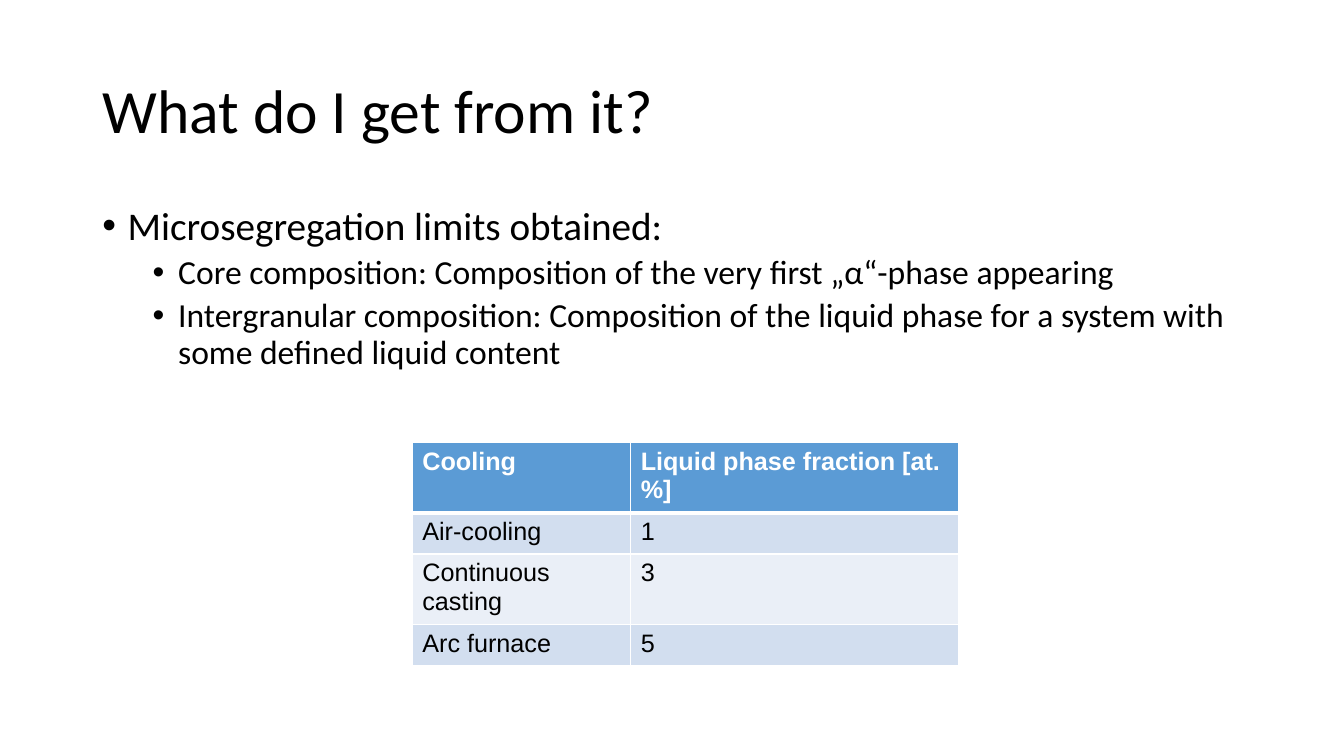
import pptx
import pptx.dml.color
import pptx.enum.text
import pptx.oxml
import pptx.oxml.ns
import pptx.util
from pptx.util import Cm

BLACK, WHITE, HEADER_BLUE = "000000", "FFFFFF", "5B9BD5"
ROW_BLUES = ("D2DEEF", "EAEFF7")

BULLETS = [
    (0, "Microsegregation limits obtained:"),
    (1, "Core composition: Composition of the very first „α“-phase appearing"),
    (1, "Intergranular composition: Composition of the liquid phase "
        "for a system with some defined liquid content"),
]
# Size, space before and left indent of each bullet level
LEVELS = [(28, 10, 0.64), (24, 5, 1.91)]
HANGING = 0.64

COOLING_ROWS = [
    ("Cooling", "Liquid phase fraction [at. %]"),
    ("Air-cooling", "1"),
    ("Continuous casting", "3"),
    ("Arc furnace", "5"),
]


def color(value):
    return pptx.dml.color.RGBColor.from_string(value)


def format_paragraph(paragraph, name, size, text_color, bold=False, **spacing):
    font = {"name": name, "size": pptx.util.Pt(size), "bold": bold}
    for target, values in ((paragraph.font, font), (paragraph, spacing)):
        for attribute, value in values.items():
            setattr(target, attribute, value)
    paragraph.font.color.rgb = color(text_color)


def add_xml(parent, tag, content="", **attributes):
    listed = " ".join(f'{key}="{value}"' for key, value in attributes.items())
    namespace = pptx.oxml.ns.nsdecls("a")
    parent.append(pptx.oxml.parse_xml(
        f"<a:{tag} {namespace} {listed}>{content}</a:{tag}>"))


def add_title(slide, text, left, top, width, height):
    title = slide.shapes.title
    title.left, title.top, title.width, title.height = left, top, width, height
    frame = title.text_frame
    frame.text = text
    frame.word_wrap = True
    frame.vertical_anchor = pptx.enum.text.MSO_ANCHOR.MIDDLE
    format_paragraph(frame.paragraphs[0], "Calibri", 44, BLACK, line_spacing=0.9,
                     alignment=pptx.enum.text.PP_ALIGN.LEFT)


def add_bullets(slide, left, top, width, height):
    frame = slide.shapes.add_textbox(left, top, width, height).text_frame
    frame.word_wrap = True
    for index, (level, text) in enumerate(BULLETS):
        paragraph = frame.add_paragraph() if index else frame.paragraphs[0]
        paragraph.text = text
        size, space_before, indent = LEVELS[level]
        properties = paragraph._p.get_or_add_pPr()
        properties.set("marL", str(Cm(indent)))
        properties.set("indent", str(-Cm(HANGING)))
        add_xml(properties, "buFont", typeface="Arial")
        add_xml(properties, "buChar", char="•")
        format_paragraph(paragraph, "Calibri", size, BLACK, level=level, line_spacing=0.9,
                         space_before=pptx.util.Pt(space_before if index else 0))


def add_borders(cell, bottom_width):
    properties = cell._tc.get_or_add_tcPr()
    line_fill = f'<a:solidFill><a:srgbClr val="{WHITE}"/></a:solidFill>'
    for side, width in (("L", 1), ("R", 1), ("T", 1), ("B", bottom_width)):
        add_xml(properties, f"ln{side}", line_fill, w=pptx.util.Pt(width))


def add_cooling_table(slide, left, top, width, row_height):
    table = slide.shapes.add_table(len(COOLING_ROWS), 2, left, top, width,
                                   row_height * len(COOLING_ROWS)).table
    table.columns[0].width = int(width * 0.4)
    table.columns[1].width = width - table.columns[0].width
    for row, texts in enumerate(COOLING_ROWS):
        header = row == 0
        for column, text in enumerate(texts):
            cell = table.cell(row, column)
            cell.text = text
            # The header is underlined by a thicker rule
            top_or_bottom = 3 if header else 1
            add_borders(cell, top_or_bottom)
            if row == 1:
                cell._tc.tcPr.find(pptx.oxml.ns.qn("a:lnT")).set("w", str(pptx.util.Pt(3)))
            cell.fill.solid()
            cell.fill.fore_color.rgb = color(HEADER_BLUE if header else ROW_BLUES[(row - 1) % 2])
            format_paragraph(cell.text_frame.paragraphs[0], "Arial", 18,
                             WHITE if header else BLACK, bold=header)


def main():
    presentation = pptx.Presentation()
    presentation.slide_width, presentation.slide_height = Cm(33.87), Cm(19.05)
    slide = presentation.slides.add_slide(presentation.slide_layouts[5])
    left, width = Cm(2.33), Cm(29.21)

    # Title
    add_title(slide, "What do I get from it?", left, Cm(1.01), width, Cm(3.68))
    # Microsegregation limits
    add_bullets(slide, left, Cm(5.07), width, Cm(5))
    # Liquid phase fraction for each kind of cooling
    add_cooling_table(slide, Cm(10.39), Cm(11.15), Cm(13.76), Cm(1.03))

    presentation.save("out.pptx")


if __name__ == "__main__":
    main()
